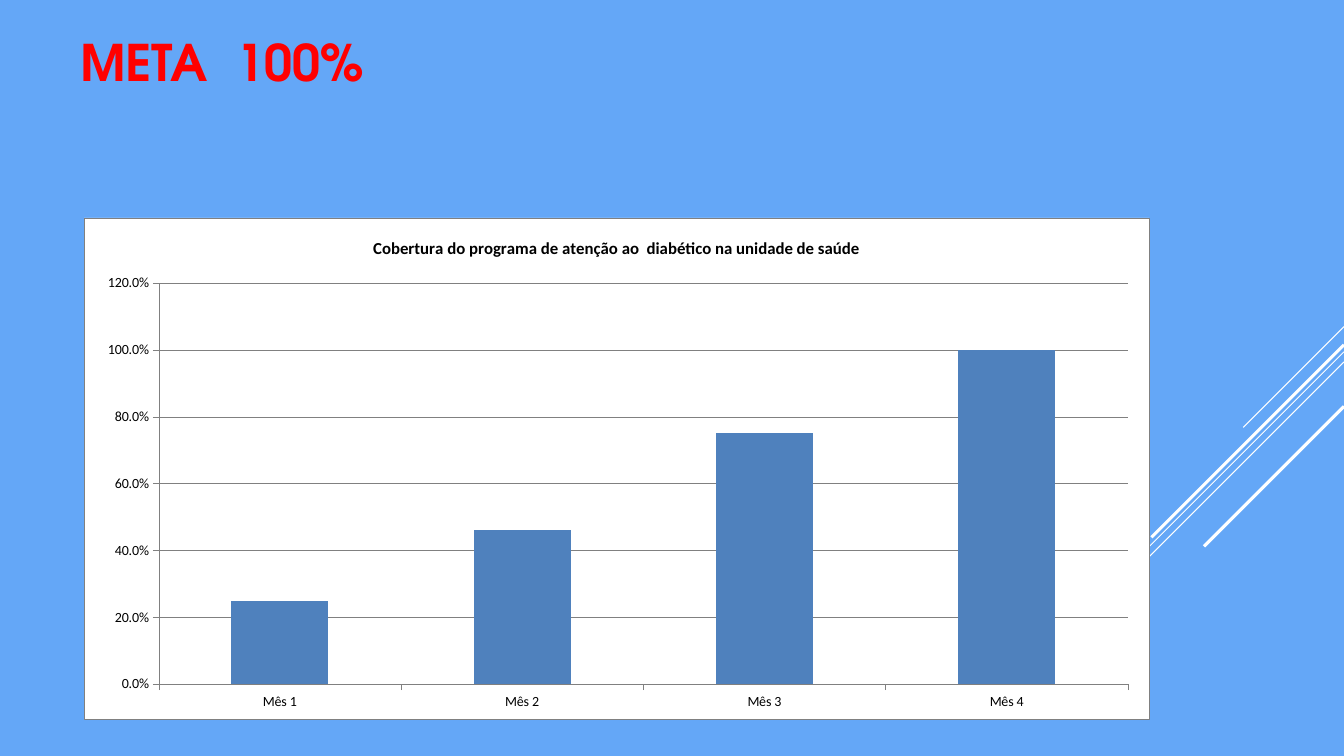
from dataclasses import dataclass

import lxml.etree
import pptx
import pptx.chart.data
import pptx.dml.color
import pptx.enum.chart
import pptx.enum.shapes
import pptx.enum.text
import pptx.oxml
import pptx.oxml.ns
import pptx.util

Pt = pptx.util.Pt
qn = pptx.oxml.ns.qn


@dataclass(frozen=True)
class Theme:
    """Colours, fonts and type sizes of the slide."""
    sky: str = "64A7F7"
    red: str = "FF0000"
    white: str = "FFFFFF"
    black: str = "000000"
    grey: str = "808080"
    bar: str = "4F81BD"
    head: str = "TeX Gyre Adventor"
    body: str = "Calibri"
    big: float = 36
    mid: float = 12
    small: float = 10
    hair: float = 0.25


THEME = Theme()


def rgb(code):
    """Turn a hex code into a colour."""
    return pptx.dml.color.RGBColor.from_string(code)


def apply(item, values):
    """Set each named value on the item."""
    for name, value in values.items():
        setattr(item, name, value)


def style(font, face, size, color, bold=False):
    """Format a font."""
    apply(font, {"name": face, "size": Pt(size), "bold": bold})
    font.fill.solid()
    font.fill.fore_color.rgb = rgb(color)


def stroke(line, color, width):
    """Format a line."""
    line.fill.solid()
    line.fill.fore_color.rgb = rgb(color)
    line.width = Pt(width)


def panel(color, edge=None):
    """Make chart area properties with a fill and a border."""
    def paint(code):
        return f'<a:solidFill><a:srgbClr val="{code}"/></a:solidFill>'
    border = paint(edge) if edge else "<a:noFill/>"
    return pptx.oxml.parse_xml(
        f'<c:spPr {pptx.oxml.ns.nsdecls("c", "a")}>{paint(color)}'
        f'<a:ln w="{Pt(THEME.hair)}">{border}</a:ln></c:spPr>')


def layout(plot, x, y, w, h):
    """Fix the inner plot area as shares of the chart."""
    for old in plot.findall(qn("c:layout")):
        plot.remove(old)
    node = lxml.etree.Element(qn("c:layout"))
    hand = lxml.etree.SubElement(node, qn("c:manualLayout"))
    parts = {"layoutTarget": "inner", "xMode": "edge", "yMode": "edge",
             "x": x, "y": y, "w": w, "h": h}
    for name, value in parts.items():
        lxml.etree.SubElement(hand, qn("c:" + name)).set("val", str(value))
    plot.insert(0, node)


def streaks(slide, box):
    """Draw the diagonal lines that run down from the right edge of the box."""
    left, top, width, height = box
    right = left + width
    rows = [(0, 72, 0.75), (18, 234.7, 0.75), (25.2, 149.2, 0.75),
            (13, 137.5, 2.25), (57, 100, 2.25)]
    for drop, run, weight in rows:
        y = top + drop
        line = slide.shapes.add_connector(
            pptx.enum.shapes.MSO_CONNECTOR.STRAIGHT,
            Pt(right), Pt(y), Pt(right - run), Pt(y + run))
        stroke(line.line, THEME.white, weight)
        props = line.element.find(qn("p:spPr"))
        lxml.etree.SubElement(props, qn("a:effectLst"))


def graph(slide, box):
    """Add the monthly coverage chart."""
    name = "Cobertura do programa de atenção ao  diabético na unidade de saúde"
    data = pptx.chart.data.CategoryChartData(number_format="0.0%")
    data.categories = [f"Mês {n}" for n in range(1, 5)]
    data.add_series(name, (0.25, 0.46, 0.75, 1))
    chart = slide.shapes.add_chart(
        pptx.enum.chart.XL_CHART_TYPE.COLUMN_CLUSTERED,
        *map(Pt, box), data).chart
    apply(chart, {"has_legend": False, "has_title": True})
    style(chart.font, THEME.body, THEME.small, THEME.black)
    frame = chart.chart_title.text_frame
    frame.text = name
    style(frame.paragraphs[0].runs[0].font, THEME.body, THEME.mid,
          THEME.black, True)

    bars = chart.plots[0]
    apply(bars, {"gap_width": 150, "vary_by_categories": False})
    fill = bars.series[0].format.fill
    fill.solid()
    fill.fore_color.rgb = rgb(THEME.bar)

    for axis in (chart.category_axis, chart.value_axis):
        axis.major_tick_mark = pptx.enum.chart.XL_TICK_MARK.OUTSIDE
        stroke(axis.format.line, THEME.grey, THEME.hair)
        style(axis.tick_labels.font, THEME.body, THEME.small, THEME.black)
    scale = chart.value_axis
    apply(scale, {"minimum_scale": 0, "maximum_scale": 1.2,
                  "major_unit": 0.2, "has_major_gridlines": True})
    stroke(scale.major_gridlines.format.line, THEME.grey, THEME.hair)
    apply(scale.tick_labels, {"number_format": "0.0%",
                              "number_format_is_linked": False})

    body = chart.element.find(qn("c:chart"))
    body.addnext(panel(THEME.white, THEME.grey))
    plot = body.find(qn("c:plotArea"))
    plot.append(panel(THEME.white))
    layout(plot, 0.07, 0.13, 0.91, 0.8)


def title(slide, box):
    """Place and format the slide title."""
    shape = slide.shapes.title
    apply(shape, dict(zip(("left", "top", "width", "height"), map(Pt, box))))
    frame = shape.text_frame
    frame.text = "META  100%"
    apply(frame, {"vertical_anchor": pptx.enum.text.MSO_ANCHOR.TOP,
                  "word_wrap": True,
                  "auto_size": pptx.enum.text.MSO_AUTO_SIZE.NONE})
    para = frame.paragraphs[0]
    para.alignment = pptx.enum.text.PP_ALIGN.LEFT
    style(para.runs[0].font, THEME.head, THEME.big, THEME.red, True)


def main():
    """Build and save the slide."""
    deck = pptx.Presentation()
    apply(deck, {"slide_width": Pt(960), "slide_height": Pt(540)})
    slide = deck.slides.add_slide(deck.slide_layouts[5])
    fill = slide.background.fill
    fill.solid()
    fill.fore_color.rgb = rgb(THEME.sky)
    streaks(slide, (725, 233.3, 235, 253))
    graph(slide, (60, 155.5, 761, 358.5))
    title(slide, (50, 18.7, 672, 119))
    deck.save("out.pptx")


if __name__ == "__main__":
    main()
